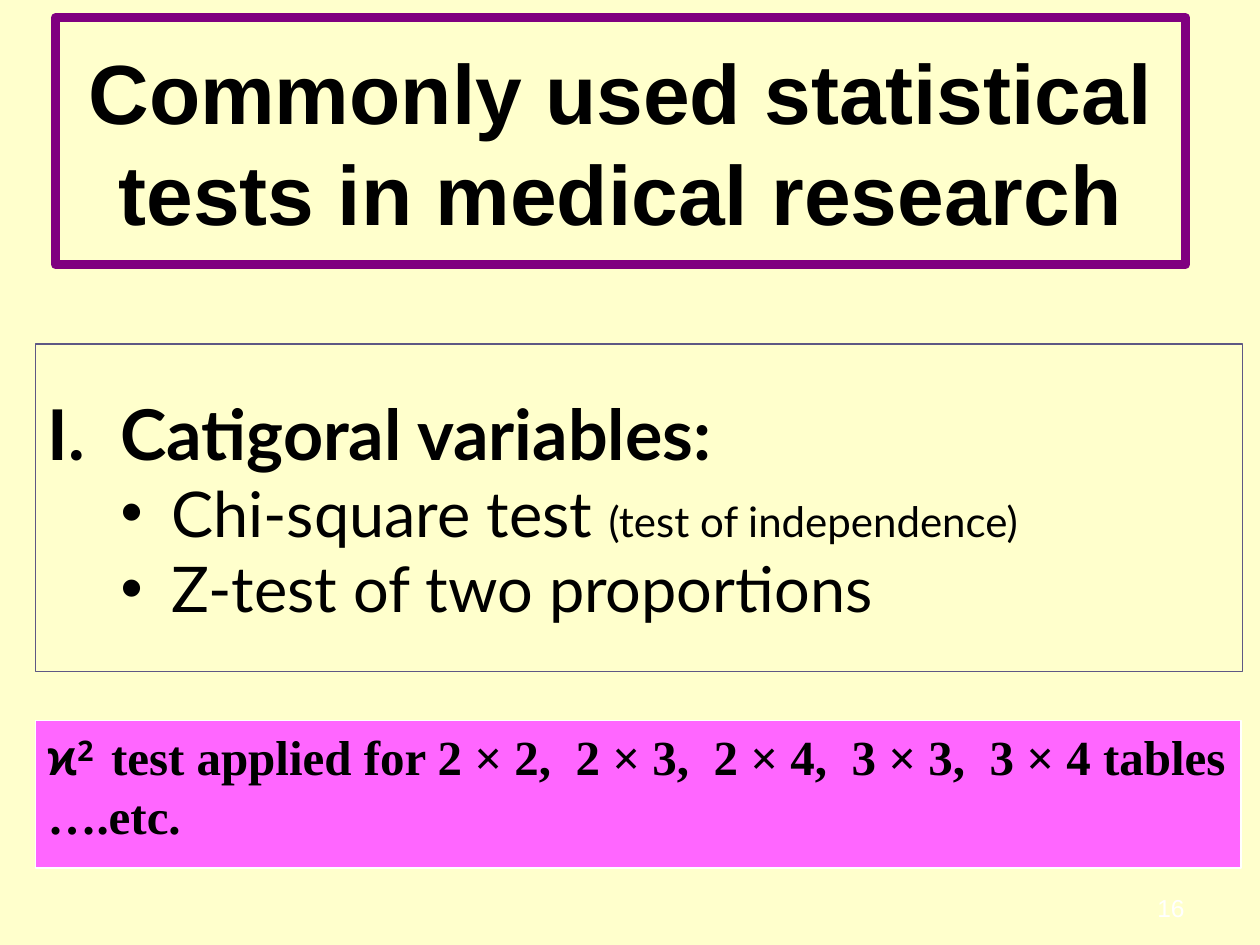
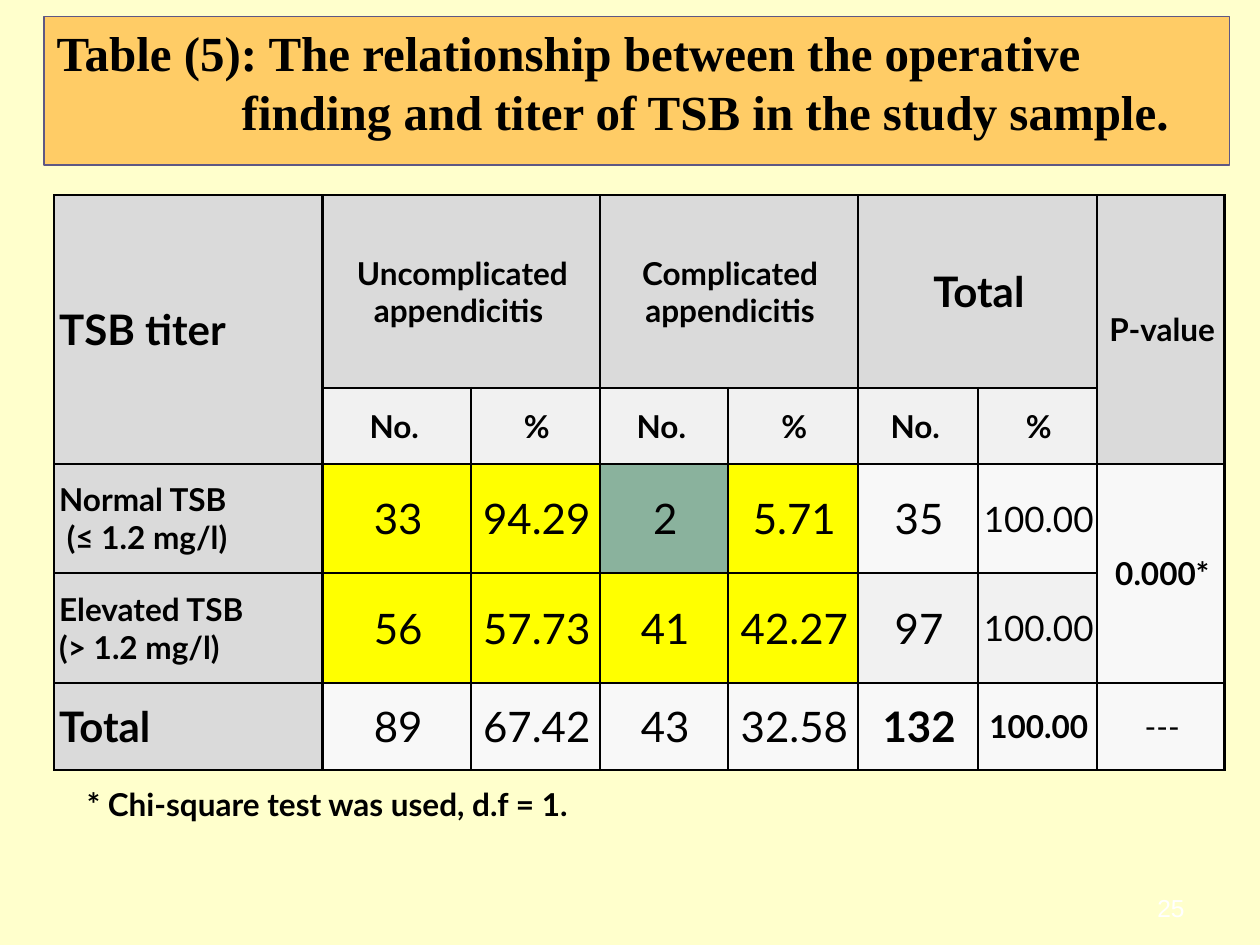
import pptx
import pptx.util
import pptx.dml.color
import pptx.enum.shapes
import pptx.enum.text
import pptx.oxml.ns
import lxml.etree

WIDTH, HEIGHT = pptx.util.Inches(10), pptx.util.Inches(7.5)
ALIGN = pptx.enum.text.PP_ALIGN
ANCHOR = pptx.enum.text.MSO_ANCHOR
BLACK, WHITE, CREAM = "000000", "FFFFFF", "FFFFCC"
PURPLE, PINK, ORANGE, SLATE = "800080", "FF66FF", "FFCC66", "5E5884"
HEADER, PALE, PALER = "DADADA", "F1F1F1", "F8F8F8"
YELLOW, GREEN = "FFFF00", "8AB29D"
SANS, BODY, SERIF, SYMBOL = "Arial", "Lato", "Times New Roman", "Noto Sans Mono"


def color(value):
    return pptx.dml.color.RGBColor.from_string(value)


def across(percent):
    return round(WIDTH * percent / 100)


def down(percent):
    return round(HEIGHT * percent / 100)


def area(left, top, width, height):
    return across(left), down(top), across(width), down(height)


def child(parent, tag, **attributes):
    return lxml.etree.SubElement(parent, pptx.oxml.ns.qn(tag), attributes)


def new_slide(deck, number):
    slide = deck.slides.add_slide(deck.slide_layouts[6])
    slide.background.fill.solid()
    slide.background.fill.fore_color.rgb = color(CREAM)
    page = text_box(slide, area(84, 93.5, 11, 5), anchor=ANCHOR.MIDDLE)
    page.paragraphs[0].alignment = ALIGN.RIGHT
    add_run(page.paragraphs[0], number, 14, font=SANS, ink=WHITE)
    return slide


def text_box(slide, place, anchor=ANCHOR.TOP, wrap=True):
    frame = slide.shapes.add_textbox(*place).text_frame
    frame.word_wrap = wrap
    frame.vertical_anchor = anchor
    return frame


def panel(slide, place, outline, weight=0.75, fill=None, anchor=ANCHOR.TOP):
    box = slide.shapes.add_shape(pptx.enum.shapes.MSO_SHAPE.RECTANGLE, *place)
    box.shadow.inherit = False
    if fill:
        box.fill.solid()
        box.fill.fore_color.rgb = color(fill)
    else:
        box.fill.background()
    box.line.color.rgb = color(outline)
    box.line.width = pptx.util.Pt(weight)
    box.text_frame.word_wrap = True
    box.text_frame.vertical_anchor = anchor
    box.text_frame.paragraphs[0].alignment = ALIGN.LEFT
    return box.text_frame


def add_run(paragraph, text, size, bold=False, font=BODY, ink=BLACK, raised=False):
    run = paragraph.add_run()
    run.text = text
    run.font.size = pptx.util.Pt(size)
    run.font.bold = bold
    run.font.name = font
    run.font.color.rgb = color(ink)
    if raised:
        run.font._element.set("baseline", "30000")


def indent(paragraph, margin, hanging):
    properties = paragraph._p.get_or_add_pPr()
    properties.set("marL", str(across(margin)))
    properties.set("indent", str(-across(hanging)))
    return properties


def bullet(paragraph, margin, hanging):
    paragraph.alignment = ALIGN.LEFT
    properties = indent(paragraph, margin, hanging)
    child(properties, "a:buFont", typeface=SANS)
    child(properties, "a:buChar", char="•")


def numeral(paragraph, margin, hanging):
    child(indent(paragraph, margin, hanging), "a:buAutoNum", type="romanUcPeriod")


def border(cell):
    properties = cell._tc.get_or_add_tcPr()
    for position, side in enumerate(("a:lnL", "a:lnR", "a:lnT", "a:lnB")):
        line = lxml.etree.Element(pptx.oxml.ns.qn(side), w=str(pptx.util.Pt(1.5)))
        child(child(line, "a:solidFill"), "a:srgbClr", val=BLACK)
        properties.insert(position, line)


def fill_cell(cell, text, size, bold, fill, align):
    cell.fill.solid()
    cell.fill.fore_color.rgb = color(fill)
    cell.vertical_anchor = ANCHOR.MIDDLE
    cell.margin_left, cell.margin_right = across(0.4), across(0.2)
    cell.margin_top = cell.margin_bottom = 0
    lines = text.split("\n")
    for position, line in enumerate(lines):
        frame = cell.text_frame
        paragraph = frame.add_paragraph() if position else frame.paragraphs[0]
        paragraph.alignment = align
        if line:
            add_run(paragraph, line, size, bold)
    border(cell)


def add_table(slide, left, top, columns, rows, cells, merges):
    place = area(left, top, sum(columns), sum(rows))
    table = slide.shapes.add_table(len(rows), len(columns), *place).table
    table.first_row = table.horz_banding = False
    for column, width in zip(table.columns, columns):
        column.width = across(width)
    for row, height in zip(table.rows, rows):
        row.height = down(height)
    for r, row in enumerate(cells):
        for c, content in enumerate(row):
            align = ALIGN.CENTER if c else ALIGN.LEFT
            fill_cell(table.cell(r, c), *content, align)
    for first, last in merges:
        table.cell(*first).merge(table.cell(*last))


def titer_row(label, label_size, counts, fills, totals, p_value):
    return ([(label, label_size, True, HEADER)]
            + [(count, 24, False, fill) for count, fill in zip(counts, fills)]
            + totals + [p_value])


def titer_cells():
    blank = ("", 18, True, HEADER)
    groups = [("Uncomplicated appendicitis ", 18), ("Complicated appendicitis", 18), ("Total", 24)]
    heading = [("TSB titer", 24, True, HEADER)]
    for group, size in groups:
        heading += [(group, size, True, HEADER), blank]
    heading.append(("P-value", 18, True, HEADER))
    units = [("No. ", 18, True, PALE), ("%", 18, True, PALE)]
    return [
        heading,
        [blank] + units * len(groups) + [blank],
        titer_row("Normal TSB\n (≤ 1.2 mg/l)", 18, ["33", "94.29", "2", "5.71"],
                  [YELLOW, YELLOW, GREEN, YELLOW],
                  [("35", 24, False, PALER), ("100.00", 20, False, PALER)],
                  ("0.000*", 18, True, PALER)),
        titer_row("Elevated TSB\n(> 1.2 mg/l)", 18, ["56", "57.73", "41", "42.27"],
                  [YELLOW] * 4,
                  [("97", 24, False, PALE), ("100.00", 20, False, PALE)],
                  ("", 18, True, PALER)),
        titer_row("Total", 24, ["89", "67.42", "43", "32.58"], [PALER] * 4,
                  [("132", 24, True, PALER), ("100.00", 18, True, PALER)],
                  ("---", 18, False, PALER)),
    ]


def build_tests(deck):
    slide = new_slide(deck, "16")
    title = panel(slide, area(4.4, 1.87, 89.7, 26.13), PURPLE, 5, anchor=ANCHOR.MIDDLE)
    title.paragraphs[0].alignment = ALIGN.CENTER
    add_run(title.paragraphs[0], "Commonly used statistical tests in medical research", 48, True, SANS)

    variables = panel(slide, area(2.8, 36.4, 95.8, 34.67), SLATE, anchor=ANCHOR.MIDDLE)
    numeral(variables.paragraphs[0], 5.8, 5.8)
    add_run(variables.paragraphs[0], "Catigoral variables:", 40, True)
    tests = [[("Chi-square test ", 36), ("(test of independence)", 24)],
             [("Z-test of two proportions", 36)]]
    for test in tests:
        paragraph = variables.add_paragraph()
        bullet(paragraph, 9.8, 4)
        for text, size in test:
            add_run(paragraph, text, size)

    usage = panel(slide, area(2.8, 76.27, 95.7, 15.6), WHITE, fill=PINK).paragraphs[0]
    usage.space_before = pptx.util.Pt(5.6)
    add_run(usage, "ϰ", 28, True, SYMBOL)
    add_run(usage, "2 ", 28, True, SYMBOL, raised=True)
    add_run(usage, "test applied for 2 × 2,  2 × 3,  2 × 4,  3 × 3,  3 × 4 tables ….etc.", 28, True, SERIF)


def build_titer(deck):
    slide = new_slide(deck, "25")
    caption = panel(slide, area(3.5, 1.73, 94.1, 15.73), SLATE, fill=ORANGE).paragraphs[0]
    indent(caption, 14.7, 14.7)
    add_run(caption, "Table (5): The relationship between the operative finding and titer of TSB in the study sample.",
            28, True, SERIF)
    pairs = [((0, c), (0, c + 1)) for c in (1, 3, 5)]
    stacks = [((0, 0), (1, 0)), ((0, 7), (1, 7)), ((2, 7), (3, 7))]
    add_table(slide, 4.3, 20.67, [21.3, 11.8, 10.2, 10.2, 10.3, 9.5, 9.5, 10.1],
              [20.4, 8, 11.6, 11.6, 9.2], titer_cells(), pairs + stacks)
    footnote = text_box(slide, area(5.9, 82.4, 47.1, 5.33), wrap=False)
    add_run(footnote.paragraphs[0], "* Chi-square test was used, d.f = 1.", 18, True)


def main():
    deck = pptx.Presentation()
    deck.slide_width, deck.slide_height = WIDTH, HEIGHT
    build_tests(deck)
    build_titer(deck)
    deck.save("out.pptx")


if __name__ == "__main__":
    main()
